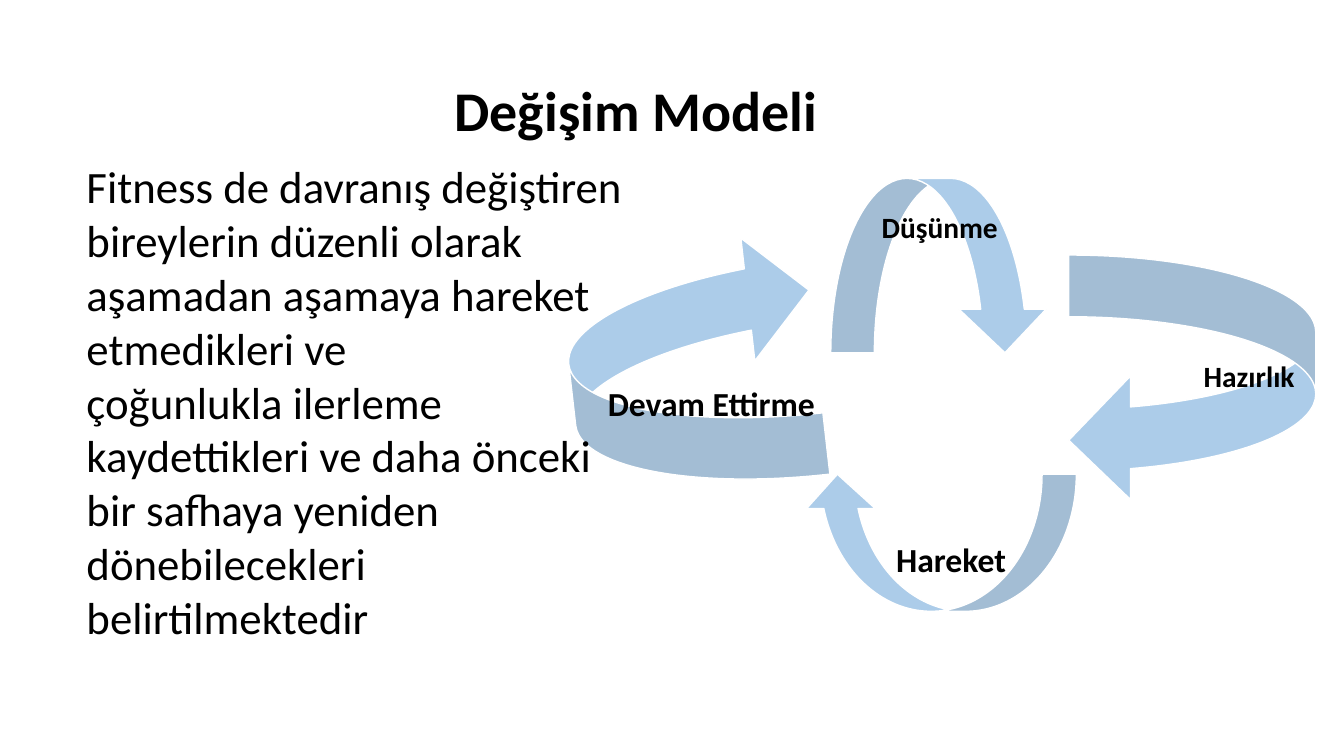
from lxml import etree
from pptx import Presentation
from pptx import util as u
from pptx.dml.color import RGBColor
from pptx.enum import shapes, text
from pptx.oxml.ns import qn

PX = 9144
BLACK = RGBColor(0x00, 0x00, 0x00)
WHITE = RGBColor(0xFF, 0xFF, 0xFF)
BLUE = RGBColor(0x5B, 0x9B, 0xD5)
DOWN = shapes.MSO_SHAPE.CURVED_DOWN_ARROW
LEFT = shapes.MSO_SHAPE.CURVED_LEFT_ARROW
MIDDLE = text.MSO_ANCHOR.MIDDLE
TOP = text.MSO_ANCHOR.TOP


def add_text(place, paragraphs, size, bold=True, anchor=TOP, wrap=True):
    frame = slide.shapes.add_textbox(*[n * PX for n in place]).text_frame
    frame.word_wrap = wrap
    frame.vertical_anchor = anchor
    for i, words in enumerate(paragraphs):
        paragraph = frame.add_paragraph() if i else frame.paragraphs[0]
        run = paragraph.add_run()
        run.text = words
        run.font.name = "Calibri"
        run.font.size = u.Pt(size)
        run.font.bold = bold
        run.font.color.rgb = BLACK
    return frame


prs = Presentation()
prs.slide_width = 1333 * PX
prs.slide_height = 750 * PX
slide = prs.slides.add_slide(prs.slide_layouts[6])

title = add_text((441, 40, 801, 145), ["Değişim Modeli"], 40, anchor=MIDDLE)
title.paragraphs[0].line_spacing = 0.9

cycle_arrows = [
    (DOWN, (824, 177, 216, 173), 0),
    (LEFT, (1060, 253, 245, 245), 0),
    (LEFT, (864, 403, 136, 271), 90),
    (LEFT, (565, 240, 245, 245), 173.5),
]
for outline, place, turn in cycle_arrows:
    arrow = slide.shapes.add_shape(outline, *[n * PX for n in place])
    arrow.rotation = turn
    arrow.shadow.inherit = False
    arrow.fill.solid()
    arrow.fill.fore_color.rgb = BLUE
    arrow.line.color.rgb = WHITE
    arrow.line.width = u.Pt(1)
    tint = arrow.fill._xPr.find(qn("a:solidFill")).find(qn("a:srgbClr"))
    etree.SubElement(tint, qn("a:alpha")).set("val", "50000")

for stage, place in [
    ("Düşünme", (849, 200, 166, 55)),
    ("Hazırlık", (1192, 281, 94, 188)),
]:
    label = add_text(place, [stage], 21, anchor=MIDDLE)
    label.margin_left = label.margin_right = 0
    label.margin_top = label.margin_bottom = 0
    label.paragraphs[0].alignment = text.PP_ALIGN.CENTER
    label.paragraphs[0].line_spacing = 0.9

add_text((879, 530, 130, 50), ["Hareket"], 24, wrap=False)
add_text((593, 375, 229, 50), ["Devam Ettirme"], 24, wrap=False)

explanation = [
    "Fitness de davranış değiştiren bireylerin düzenli olarak "
    "aşamadan aşamaya hareket etmedikleri ve",
    "çoğunlukla ilerleme kaydettikleri ve daha önceki bir safhaya yeniden",
    "dönebilecekleri belirtilmektedir",
]
add_text((76, 153, 570, 495), explanation, 32, bold=False)

prs.save("out.pptx")
